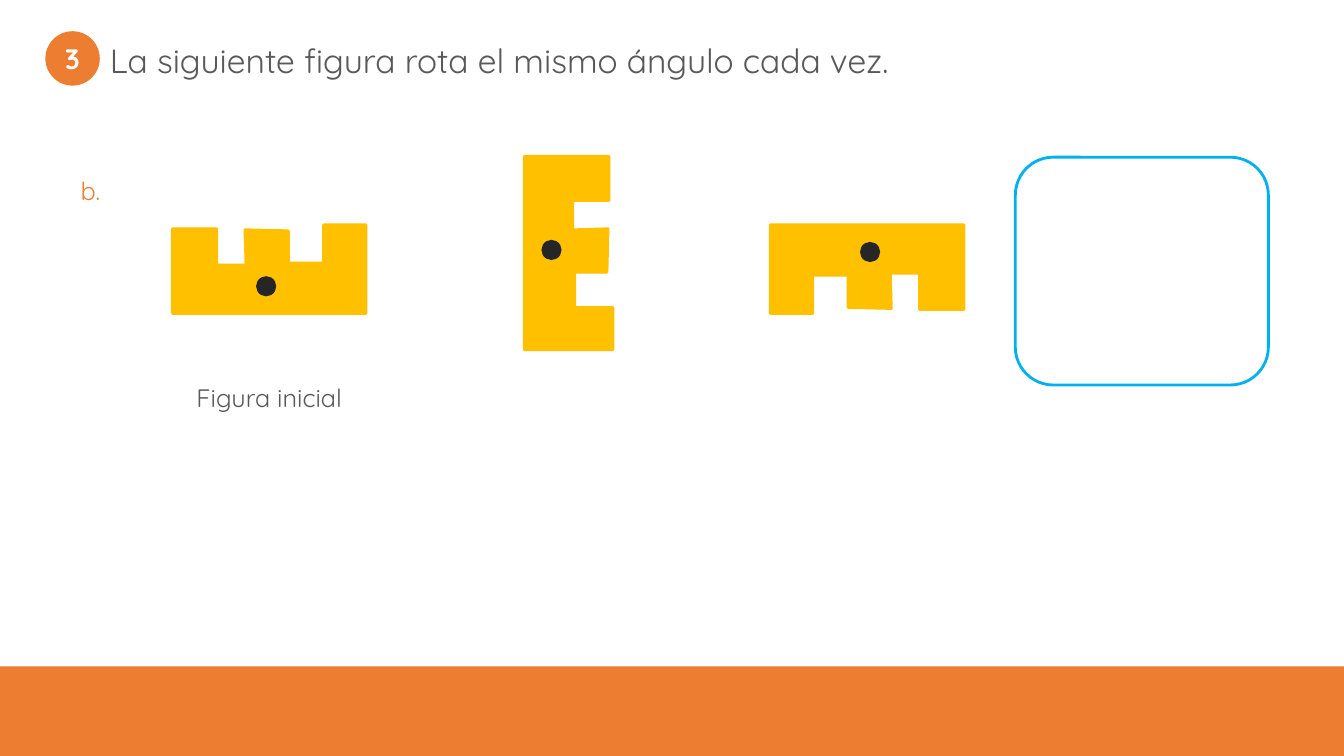
from math import cos, radians, sin

from pptx import Presentation
from pptx.dml.color import RGBColor
from pptx.enum.shapes import MSO_SHAPE
from pptx.enum.text import MSO_ANCHOR, PP_ALIGN
from pptx.util import Inches, Pt

ORANGE = RGBColor(0xED, 0x7D, 0x31)
YELLOW = RGBColor(0xFF, 0xC0, 0x00)
BLUE = RGBColor(0x00, 0xB0, 0xF0)
GRAY = RGBColor(0x59, 0x59, 0x59)
BLACK = RGBColor(0x26, 0x26, 0x26)
WHITE = RGBColor(0xFF, 0xFF, 0xFF)
FONT = "Quicksand"

# Castle outline, measured from the top left of its box
CASTLE_WIDTH, CASTLE_HEIGHT = 1.92, 0.88
CASTLE = [
    (0, 0.04), (0.44, 0.04), (0.44, 0.4), (0.73, 0.4), (0.72, 0.05),
    (1.15, 0.06), (1.15, 0.38), (1.5, 0.38), (1.5, 0), (1.92, 0),
    (1.92, 0.88), (0, 0.88),
]
# Rotation point, measured from the centre of the castle
DOT_X, DOT_Y, DOT_SIZE = -0.03, 0.17, 0.2


def write(shape, text, size, color, align=PP_ALIGN.LEFT, bold=False):
    paragraph = shape.text_frame.paragraphs[0]
    paragraph.text = text
    paragraph.alignment = align
    paragraph.font.name = FONT
    paragraph.font.size = Pt(size)
    paragraph.font.bold = bold
    paragraph.font.color.rgb = color


def add_label(slide, box, text, size, color, align=PP_ALIGN.LEFT):
    label = slide.shapes.add_textbox(*map(Inches, box))
    label.text_frame.word_wrap = True
    write(label, text, size, color, align)


def add_filled(slide, kind, box, color):
    shape = slide.shapes.add_shape(kind, *map(Inches, box))
    shape.shadow.inherit = False
    shape.fill.solid()
    shape.fill.fore_color.rgb = color
    shape.line.fill.background()
    return shape


def add_heading(slide, left, top):
    add_label(slide, (left + 0.54, top + 0.04, 8.42, 0.5),
              "La siguiente figura rota el mismo ángulo cada vez.", 24, GRAY)
    # Exercise number
    badge = add_filled(slide, MSO_SHAPE.OVAL, (left, top, 0.54, 0.54), ORANGE)
    frame = badge.text_frame
    frame.margin_left = frame.margin_right = 0
    frame.vertical_anchor = MSO_ANCHOR.MIDDLE
    write(badge, "3", 20, WHITE, PP_ALIGN.CENTER, bold=True)


def add_castle(slide, center_x, center_y, angle):
    left = center_x - CASTLE_WIDTH / 2
    top = center_y - CASTLE_HEIGHT / 2
    points = [(Inches(left + x), Inches(top + y)) for x, y in CASTLE]
    builder = slide.shapes.build_freeform(*points[0])
    builder.add_line_segments(points[1:], close=True)
    castle = builder.convert_to_shape()
    castle.shadow.inherit = False
    castle.fill.solid()
    castle.fill.fore_color.rgb = YELLOW
    castle.line.color.rgb = YELLOW
    castle.line.width = Pt(2)
    castle.rotation = angle

    # The dot turns with the castle
    turn = radians(angle)
    dot_x = center_x + DOT_X * cos(turn) - DOT_Y * sin(turn)
    dot_y = center_y + DOT_X * sin(turn) + DOT_Y * cos(turn)
    add_filled(slide, MSO_SHAPE.OVAL,
               (dot_x - DOT_SIZE / 2, dot_y - DOT_SIZE / 2, DOT_SIZE, DOT_SIZE),
               BLACK)


def add_answer_box(slide, box):
    answer = slide.shapes.add_shape(MSO_SHAPE.ROUNDED_RECTANGLE, *map(Inches, box))
    answer.shadow.inherit = False
    answer.fill.background()
    answer.line.color.rgb = BLUE
    answer.line.width = Pt(2)


def add_sequence(slide):
    add_label(slide, (0.7, 1.69, 0.41, 0.4), "b.", 18, ORANGE)
    positions = [(2.67, 2.67), (5.64, 2.51), (8.6, 2.67)]
    for step, (center_x, center_y) in enumerate(positions):
        add_castle(slide, center_x, center_y, 90 * step)
    add_answer_box(slide, (10.07, 1.56, 2.51, 2.26))
    add_label(slide, (1.38, 3.74, 2.58, 0.4), "Figura inicial", 18, GRAY,
              PP_ALIGN.CENTER)


def main():
    presentation = Presentation()
    presentation.slide_width = Inches(13.33)
    presentation.slide_height = Inches(7.5)
    slide = presentation.slides.add_slide(presentation.slide_layouts[6])
    # Footer band
    add_filled(slide, MSO_SHAPE.RECTANGLE, (0, 6.61, 13.33, 0.89), ORANGE)
    add_heading(slide, 0.45, 0.31)
    add_sequence(slide)
    presentation.save("out.pptx")


if __name__ == "__main__":
    main()
